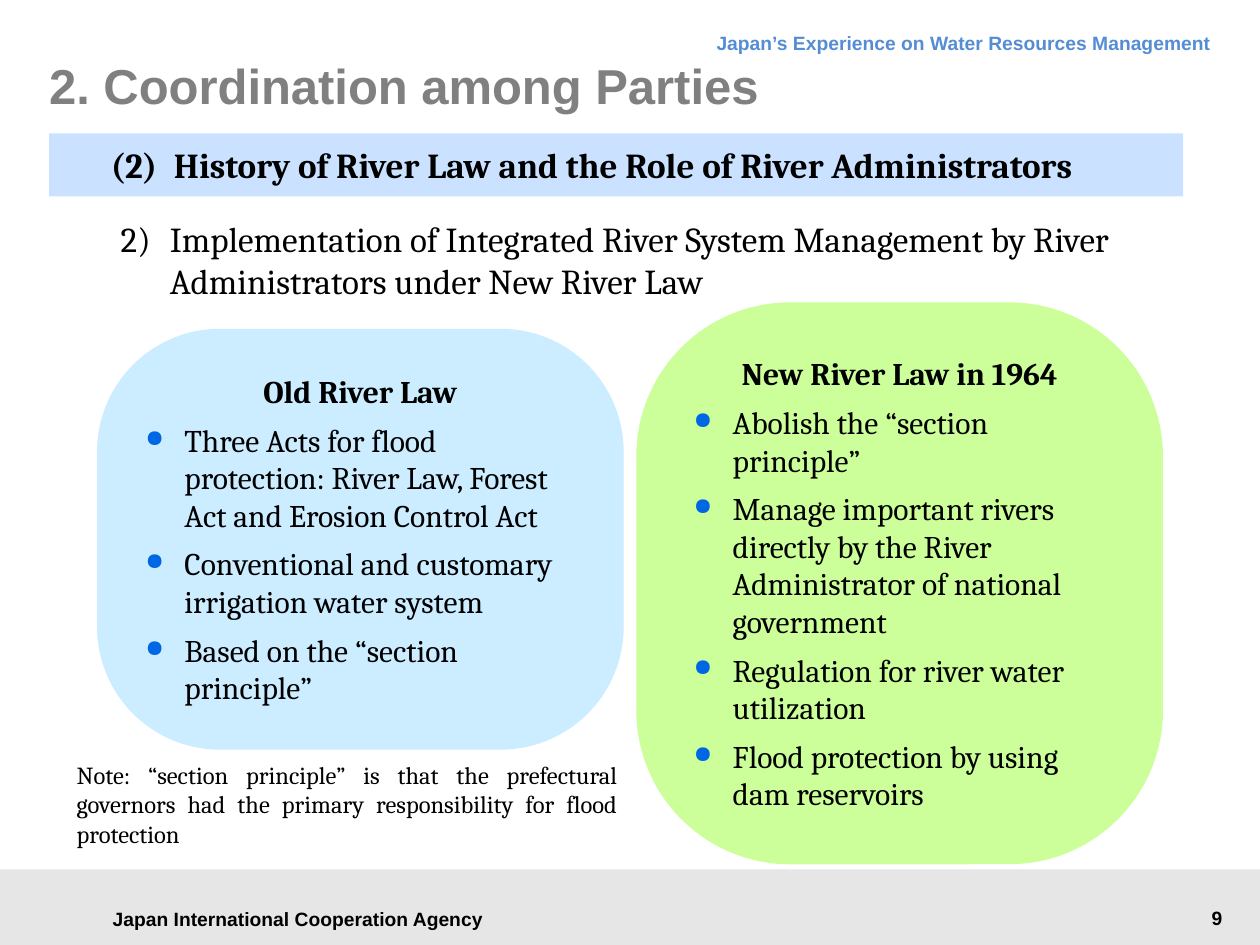
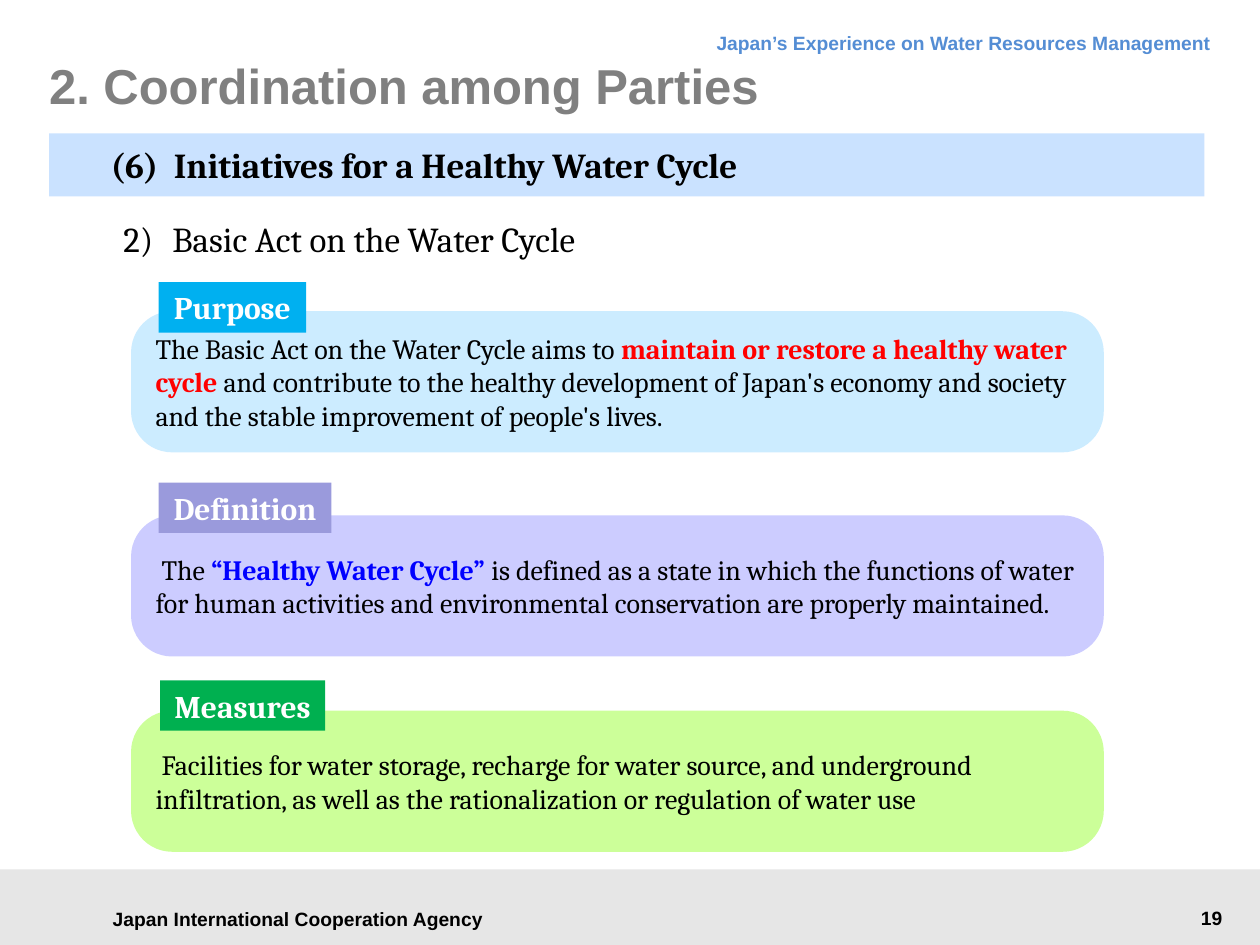
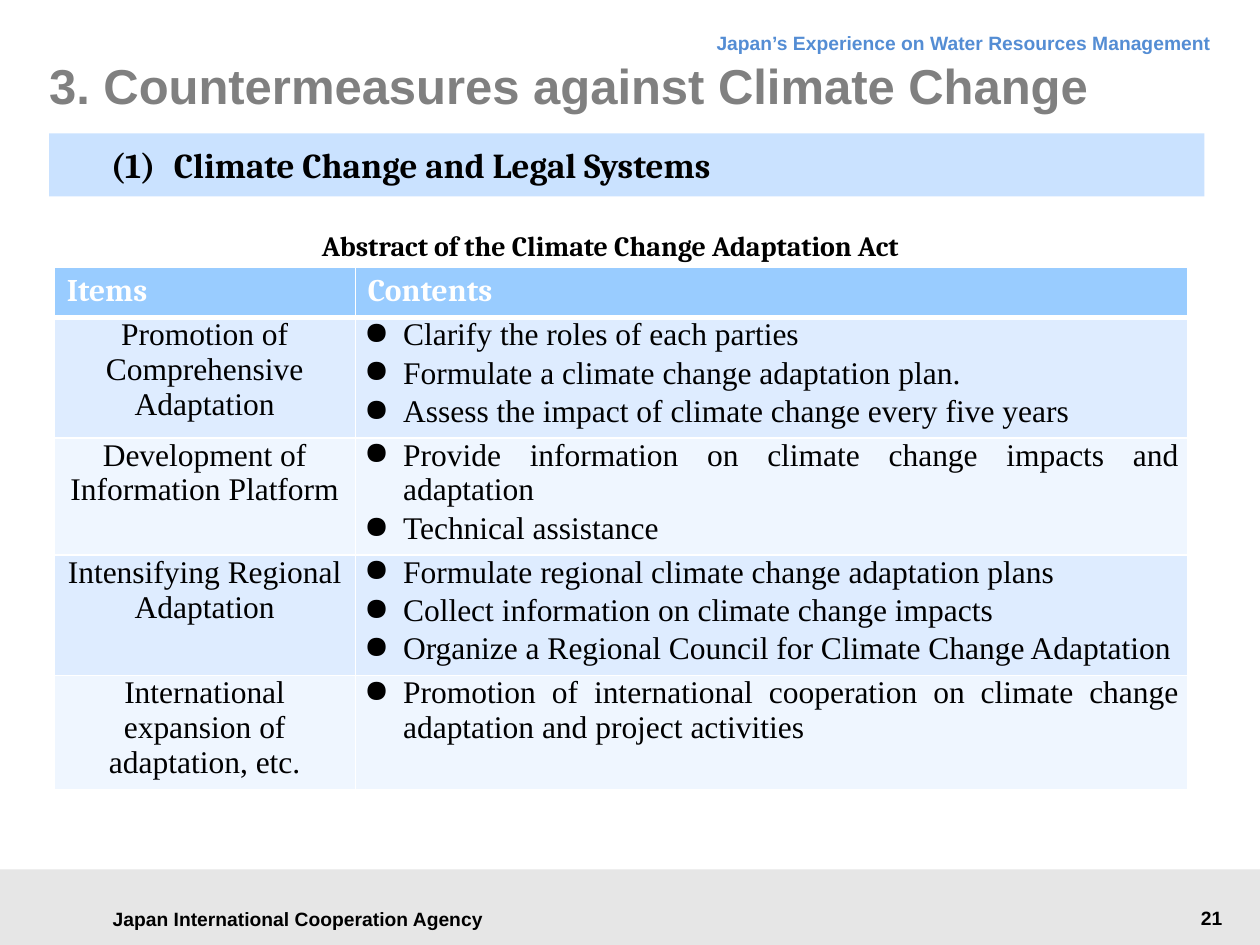
from typing import NamedTuple

from lxml.etree import SubElement
from pptx import Presentation
from pptx.dml.color import RGBColor
from pptx.enum.shapes import MSO_SHAPE
from pptx.enum.text import MSO_ANCHOR, PP_ALIGN
from pptx.oxml.ns import qn
from pptx.util import Inches, Pt

BLACK = RGBColor(0x00, 0x00, 0x00)
WHITE = RGBColor(0xFF, 0xFF, 0xFF)
TITLE_GREY = RGBColor(0x80, 0x80, 0x80)
FOOTER_GREY = RGBColor(0xE6, 0xE6, 0xE6)
HEADER_BLUE = RGBColor(0x54, 0x8D, 0xD4)
BAND_BLUE = RGBColor(0xCA, 0xE2, 0xFF)
BULLET_BLUE = RGBColor(0x00, 0x67, 0xE4)
PALE_BLUE = RGBColor(0xCC, 0xEC, 0xFF)
PALE_GREEN = RGBColor(0xCC, 0xFF, 0x99)
PALE_VIOLET = RGBColor(0xCC, 0xCC, 0xFF)
SKY = RGBColor(0x00, 0xB0, 0xF0)
VIOLET = RGBColor(0x9A, 0x9A, 0xDC)
GREEN = RGBColor(0x00, 0xB0, 0x50)
RED = RGBColor(0xFF, 0x00, 0x00)
BLUE = RGBColor(0x00, 0x00, 0xFF)
TABLE_HEAD = RGBColor(0x99, 0xCC, 0xFF)
TABLE_ROWS = (RGBColor(0xDE, 0xEC, 0xFF), RGBColor(0xEF, 0xF6, 0xFF))

CORNER = 0.292
HANGING = 0.31
DEFAULT_INSETS = (0.1, 0.05, 0.1, 0.05)


class Box(NamedTuple):
    """A region of a slide in inches."""
    left: float
    top: float
    width: float
    height: float

    def emu(self):
        """Return the four lengths for python-pptx."""
        return [Inches(length) for length in self]


class Style(NamedTuple):
    """The look of a run of text."""
    size: int
    font: str = "Cambria"
    color: RGBColor = BLACK
    bold: bool = False


SMALL = Style(11, "Arial", bold=True)
TITLE = Style(28, "Arial", TITLE_GREY, True)
HEADING = Style(20, bold=True)
TOPIC = Style(20)
BODY = Style(18)
BODY_BOLD = Style(18, bold=True)
TAG = Style(18, color=WHITE, bold=True)
STATEMENT = Style(16)
CAPTION = Style(16, bold=True)
NOTE = Style(14)
TABLE_TEXT = Style(18, "Times New Roman")


def add_run(paragraph, text, style):
    """Append one styled run."""
    run = paragraph.add_run()
    run.text = text
    run.font.size = Pt(style.size)
    run.font.name = style.font
    run.font.bold = style.bold
    run.font.color.rgb = style.color


def next_paragraph(frame):
    """Return the unused first paragraph or a new one."""
    first = frame.paragraphs[0]
    return frame.add_paragraph() if first.runs else first


def hang(paragraph, indent):
    """Give a paragraph a hanging indent."""
    properties = paragraph._p.get_or_add_pPr()
    properties.set("marL", str(Inches(indent)))
    properties.set("indent", str(-Inches(indent)))


def add_bullet(paragraph, color=None, percent=100):
    """Give a paragraph a round bullet."""
    hang(paragraph, HANGING)
    properties = paragraph._p.get_or_add_pPr()
    if color is not None:
        bullet_color = SubElement(properties, qn("a:buClr"))
        SubElement(bullet_color, qn("a:srgbClr"), val=str(color))
    SubElement(properties, qn("a:buSzPct"), val=str(percent * 1000))
    SubElement(properties, qn("a:buChar"), char="●")


def set_frame(frame, insets=DEFAULT_INSETS, anchor=MSO_ANCHOR.TOP, wrap=True):
    """Set the margins, anchor and wrapping of a text frame."""
    frame.word_wrap = wrap
    frame.vertical_anchor = anchor
    (frame.margin_left, frame.margin_top,
     frame.margin_right, frame.margin_bottom) = [Inches(i) for i in insets]


def add_text(slide, box, text, style, align=PP_ALIGN.LEFT, **frame_options):
    """Add a text box with one paragraph and return the paragraph."""
    frame = slide.shapes.add_textbox(*box.emu()).text_frame
    set_frame(frame, **frame_options)
    paragraph = frame.paragraphs[0]
    paragraph.alignment = align
    add_run(paragraph, text, style)
    return paragraph


def add_panel(slide, box, color, rounded=False, **frame_options):
    """Add a filled panel and return its text frame."""
    kind = MSO_SHAPE.ROUNDED_RECTANGLE if rounded else MSO_SHAPE.RECTANGLE
    panel = slide.shapes.add_shape(kind, *box.emu())
    if rounded:
        panel.adjustments[0] = CORNER
    panel.shadow.inherit = False
    panel.fill.solid()
    panel.fill.fore_color.rgb = color
    panel.line.fill.background()
    set_frame(panel.text_frame, **frame_options)
    return panel.text_frame


def add_footer(slide, box, page):
    """Add the footer bar with the agency and the page number."""
    add_panel(slide, box, FOOTER_GREY)
    add_text(slide, Box(box.left + 0.71, box.top + 0.22, 3.31, 0.34),
             "Japan International Cooperation Agency", SMALL,
             PP_ALIGN.CENTER, anchor=MSO_ANCHOR.MIDDLE)
    add_text(slide, Box(box.left + 8.23, box.top + 0.24, 1.57, 0.29),
             str(page), SMALL, PP_ALIGN.RIGHT)


def add_band(slide, box, number, heading):
    """Add the numbered section band."""
    frame = add_panel(slide, box, BAND_BLUE, insets=(0.43, 0.08, 0.35, 0.08))
    paragraph = frame.paragraphs[0]
    paragraph.alignment = PP_ALIGN.LEFT
    paragraph._p.get_or_add_pPr().set("marL", str(Inches(0.06)))
    add_run(paragraph, f"({number})\t{heading}", HEADING)


def start_slide(deck, page, title, number, heading, band_width=9.17):
    """Add a slide with the parts that all slides share."""
    slide = deck.slides.add_slide(deck.slide_layouts[6])
    add_footer(slide, Box(0, 6.9, 10, 0.6), page)
    running_head = add_text(
        slide, Box(2.72, 0.13, 6.99, 0.38),
        "Japan’s Experience on Water Resources Management",
        SMALL._replace(color=HEADER_BLUE), PP_ALIGN.RIGHT)
    running_head.line_spacing = Pt(18)
    add_text(slide, Box(0.39, 0.28, 9, 0.79), title, TITLE,
             insets=(0, 0, 0, 0), anchor=MSO_ANCHOR.MIDDLE)
    add_band(slide, Box(0.39, 1.06, band_width, 0.5), number, heading)
    return slide


def add_topic(slide, box, text):
    """Add the numbered topic line under the band."""
    hang(add_text(slide, box, f"2) \t{text}", TOPIC), 0.39)


def add_law(slide, box, color, name, points):
    """Add a rounded panel with the name and the points of a law."""
    frame = add_panel(slide, box, color, True, anchor=MSO_ANCHOR.MIDDLE)
    name_line = frame.paragraphs[0]
    name_line.alignment = PP_ALIGN.CENTER
    name_line.space_after = Pt(6)
    add_run(name_line, name, BODY_BOLD)
    for point in points:
        paragraph = frame.add_paragraph()
        add_bullet(paragraph, BULLET_BLUE, 75)
        paragraph.alignment = PP_ALIGN.LEFT
        paragraph.space_after = Pt(6)
        add_run(paragraph, point, BODY)


def add_provision(slide, box, color, pieces, tag, tag_box, tag_color):
    """Add a statement panel with a tag placed relative to it."""
    frame = add_panel(slide, box, color, True, anchor=MSO_ANCHOR.MIDDLE)
    paragraph = frame.paragraphs[0]
    paragraph.alignment = PP_ALIGN.LEFT
    paragraph.space_after = Pt(6)
    for text, emphasis in pieces:
        style = (STATEMENT if emphasis is None
                 else STATEMENT._replace(color=emphasis, bold=True))
        add_run(paragraph, text, style)
    placed = tag_box._replace(left=box.left + tag_box.left,
                              top=box.top + tag_box.top)
    tag_line = add_panel(slide, placed, tag_color, wrap=False).paragraphs[0]
    tag_line.alignment = PP_ALIGN.CENTER
    add_run(tag_line, tag, TAG)


def fill_cell(cell, color, bottom_width=1):
    """Give a cell white borders and a fill."""
    properties = cell._tc.get_or_add_tcPr()
    for side, width in (("L", 1), ("R", 1), ("T", 1), ("B", bottom_width)):
        border = SubElement(properties, qn(f"a:ln{side}"), w=str(Pt(width)))
        paint = SubElement(border, qn("a:solidFill"))
        SubElement(paint, qn("a:srgbClr"), val=str(WHITE))
    cell.fill.solid()
    cell.fill.fore_color.rgb = color


def write_cell(cell, lines, align, bulleted=False):
    """Write the lines of a body cell."""
    cell.margin_left = cell.margin_right = Inches(0.07)
    cell.margin_top = cell.margin_bottom = 0
    for index, line in enumerate(lines):
        paragraph = next_paragraph(cell.text_frame)
        if bulleted:
            add_bullet(paragraph)
        paragraph.alignment = align
        if index:
            paragraph.space_before = Pt(1)
        paragraph.space_after = Pt(1)
        add_run(paragraph, line, TABLE_TEXT)


def add_act_table(slide, box, headers, items, widths, heights):
    """Add the table of items and contents of the act."""
    table = slide.shapes.add_table(len(heights), len(widths), *box.emu()).table
    table.horz_banding = False
    for column, width in zip(table.columns, widths):
        column.width = Inches(width)
    for row, height in zip(table.rows, heights):
        row.height = Inches(height)
    for column, header in enumerate(headers):
        cell = table.cell(0, column)
        fill_cell(cell, TABLE_HEAD, 3)
        add_run(cell.text_frame.paragraphs[0], header, TAG)
    for row, (item, contents) in enumerate(items, 1):
        for column in range(len(widths)):
            fill_cell(table.cell(row, column), TABLE_ROWS[(row - 1) % 2])
        write_cell(table.cell(row, 0), [item], PP_ALIGN.CENTER)
        write_cell(table.cell(row, 1), contents, PP_ALIGN.JUSTIFY, True)


def build_river_law(deck):
    """Build the comparison of the old and new river laws."""
    slide = start_slide(
        deck, 9, "2. Coordination among Parties", 2,
        "History of River Law and the Role of River Administrators", 9)
    add_topic(slide, Box(0.86, 1.68, 8.08, 0.77),
              "Implementation of Integrated River System Management by River "
              "Administrators under New River Law")
    add_law(slide, Box(5.05, 2.4, 4.18, 4.46), PALE_GREEN,
            "New River Law in 1964", [
                "Abolish the “section principle”",
                "Manage important rivers directly by the River Administrator "
                "of national government",
                "Regulation for river water utilization",
                "Flood protection by using dam reservoirs"])
    add_law(slide, Box(0.77, 2.61, 4.18, 3.34), PALE_BLUE, "Old River Law", [
        "Three Acts for flood protection: River Law, Forest Act and Erosion "
        "Control Act",
        "Conventional and customary irrigation water system",
        "Based on the “section principle”"])
    add_text(slide, Box(0.51, 5.98, 4.49, 0.81),
             "Note: “section principle” is that the prefectural governors had "
             "the primary responsibility for flood protection",
             NOTE, PP_ALIGN.JUSTIFY)


def build_water_cycle(deck):
    """Build the outline of the Basic Act on the Water Cycle."""
    slide = start_slide(deck, 19, "2. Coordination among Parties", 6,
                        "Initiatives for a Healthy Water Cycle")
    add_topic(slide, Box(0.88, 1.68, 8.69, 0.44),
              "Basic Act on the Water Cycle")
    provisions = [
        (2.47, PALE_BLUE, [
            ("The Basic Act on the Water Cycle aims to ", None),
            ("maintain or restore a healthy water cycle", RED),
            (" and contribute to the healthy development of Japan's economy "
             "and society and the stable improvement of people's lives.",
             None)], "Purpose", Box(0.22, -0.23, 1.17, 0.4), SKY),
        (4.09, PALE_VIOLET, [
            (" The ", None),
            ("“Healthy Water Cycle”", BLUE),
            (" is defined as a state in which the functions of water for "
             "human activities and environmental conservation are properly "
             "maintained.", None)],
         "Definition", Box(0.22, -0.26, 1.37, 0.4), VIOLET),
        (5.64, PALE_GREEN, [
            (" Facilities for water storage, recharge for water source, and "
             "underground infiltration, as well as the rationalization or "
             "regulation of water use", None)],
         "Measures", Box(0.23, -0.24, 1.31, 0.4), GREEN),
    ]
    for top, *provision in provisions:
        add_provision(slide, Box(1.04, top, 7.72, 1.12), *provision)


def build_adaptation_act(deck):
    """Build the table on the Climate Change Adaptation Act."""
    slide = start_slide(deck, 21, "3. Countermeasures against Climate Change",
                        1, "Climate Change and Legal Systems")
    caption = add_text(slide, Box(1.42, 1.86, 6.85, 0.22),
                       "Abstract of the Climate Change Adaptation Act",
                       CAPTION, PP_ALIGN.CENTER, insets=(0, 0, 0, 0))
    caption.line_spacing = Pt(16)
    items = [
        ("Promotion of Comprehensive Adaptation", [
            "Clarify the roles of each parties",
            "Formulate a climate change adaptation plan.",
            "Assess the impact of climate change every five years"]),
        ("Development of Information Platform", [
            "Provide information on climate change impacts and adaptation",
            "Technical assistance"]),
        ("Intensifying Regional Adaptation", [
            "Formulate regional climate change adaptation plans",
            "Collect information on climate change impacts",
            "Organize a Regional Council for Climate Change Adaptation"]),
        ("International expansion of adaptation, etc.", [
            "Promotion of international cooperation on climate change "
            "adaptation and project activities"]),
    ]
    add_act_table(slide, Box(0.43, 2.12, 9, 4.14), ("Items", "Contents"),
                  items, (2.39, 6.61), (0.4, 0.95, 0.93, 0.95, 0.91))


def main():
    """Build and save the presentation."""
    deck = Presentation()
    deck.slide_width = Inches(10)
    deck.slide_height = Inches(7.5)
    build_river_law(deck)
    build_water_cycle(deck)
    build_adaptation_act(deck)
    deck.save("out.pptx")


if __name__ == "__main__":
    main()
